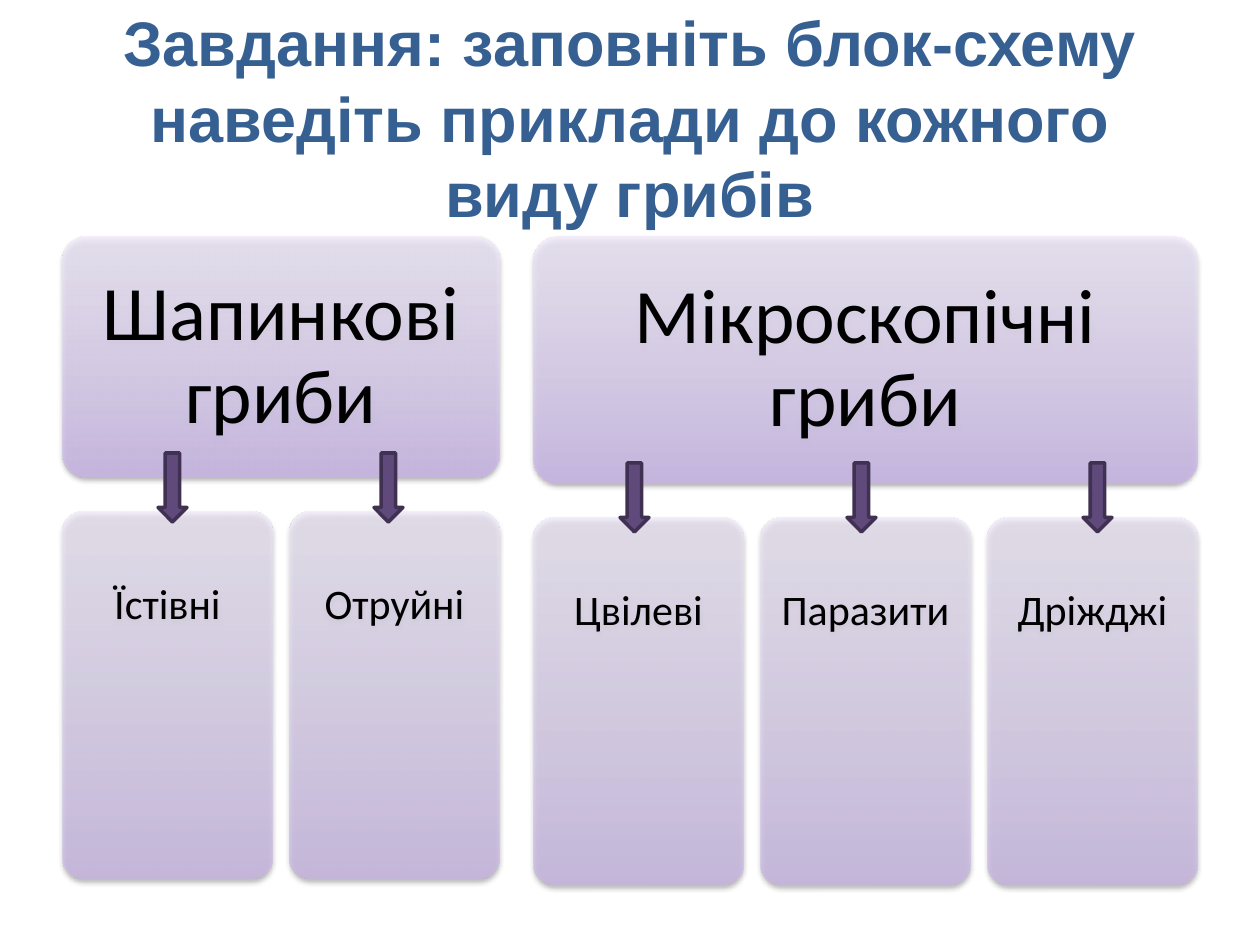
from lxml.etree import fromstring
from pptx import Presentation
from pptx.dml.color import RGBColor
from pptx.enum.shapes import MSO_SHAPE
from pptx.enum.text import MSO_ANCHOR, PP_ALIGN
from pptx.util import Pt

PX = 914400 / 126
NS = 'xmlns:a="http://schemas.openxmlformats.org/drawingml/2006/main"'
TITLE = "Завдання: заповніть блок-схему наведіть приклади до кожного виду грибів"
STOPS = [(0, "C9B5E8"), (35, "D8CBEE"), (100, "F0EAF9")]
GROUPS = [
    {"name": "Шапинкові гриби", "left": 63, "high": 240, "arrow": 453,
     "kinds": [("Їстівні", 158), ("Отруйні", 374)]},
    {"name": "Мікроскопічні гриби", "left": 534, "high": 246, "arrow": 463,
     "kinds": [("Цвілеві", 620), ("Паразити", 847), ("Дріжджі", 1083)]},
]
TOP, DROP = 237, 35
WIDE, TALL, GAP = 209, 367, 18


def emu(*vals):
    """Turn pixels into EMU."""
    return [round(v * PX) for v in vals]


def color(code):
    """Turn a hex string into a colour."""
    return RGBColor.from_string(code)


def write(shape, text, size, face, code, pads, anchor, space):
    """Put one centred paragraph into a shape."""
    frame = shape.text_frame
    frame.word_wrap = True
    frame.vertical_anchor = anchor
    side, top, base = emu(*pads)
    frame.margin_left = frame.margin_right = side
    frame.margin_top, frame.margin_bottom = top, base
    para = frame.paragraphs[0]
    para.text = text
    para.alignment = PP_ALIGN.CENTER
    para.line_spacing = space
    font = para.font
    font.size, font.name, font.color.rgb = Pt(size), face, color(code)
    return font


def card(slide, box, text, size, alpha, pads, anchor):
    """Draw a rounded card with a gradient, a soft shadow and text."""
    shape = slide.shapes.add_shape(MSO_SHAPE.ROUNDED_RECTANGLE, *emu(*box))
    shape.adjustments[0] = 0.1
    shape.line.fill.background()
    stops = "".join(
        f'<a:gs pos="{pos * 1000}"><a:srgbClr val="{code}">'
        f'<a:alpha val="{alpha * 1000}"/></a:srgbClr></a:gs>'
        for pos, code in STOPS)
    props = shape.element.spPr
    props.insert(2, fromstring(
        f'<a:gradFill {NS} rotWithShape="1"><a:gsLst>{stops}</a:gsLst>'
        '<a:lin ang="16200000" scaled="0"/></a:gradFill>'))
    props.append(fromstring(
        f'<a:effectLst {NS}><a:outerShdw blurRad="40000" dist="20000" '
        'dir="5400000" rotWithShape="0"><a:srgbClr val="000000">'
        '<a:alpha val="38000"/></a:srgbClr></a:outerShdw></a:effectLst>'))
    write(shape, text, size, "Calibri", "000000", pads, anchor, 0.9)


def arrow(slide, left, top):
    """Draw a block arrow pointing down."""
    shape = slide.shapes.add_shape(
        MSO_SHAPE.DOWN_ARROW, *emu(left, top, 29, 69))
    shape.shadow.inherit = False
    shape.fill.solid()
    shape.fill.fore_color.rgb = color("604A7B")
    shape.line.color.rgb = color("403152")
    shape.line.width = Pt(2)


def main():
    """Build the slide and save it."""
    deck = Presentation()
    deck.slide_width, deck.slide_height = emu(1260, 945)
    slide = deck.slides.add_slide(deck.slide_layouts[6])
    title = slide.shapes.add_textbox(*emu(63, 38, 1134, 158))
    font = write(title, TITLE, 36, "Arial", "376092", (13, 6, 6),
                 MSO_ANCHOR.MIDDLE, 1.0)
    font.bold = True
    for group in GROUPS:
        left, high, kinds = group["left"], group["high"], group["kinds"]
        span = len(kinds) * (WIDE + GAP) - GAP
        card(slide, (left, TOP, span, high), group["name"], 44, 80,
             (24, 24, 24), MSO_ANCHOR.MIDDLE)
        for i, (name, _) in enumerate(kinds):
            box = (left + i * (WIDE + GAP), TOP + high + DROP, WIDE, TALL)
            card(slide, box, name, 24, 70, (6, 65, 12), MSO_ANCHOR.TOP)
    for group in GROUPS:
        for _, left in group["kinds"]:
            arrow(slide, left, group["arrow"])
    deck.save("out.pptx")


if __name__ == "__main__":
    main()
